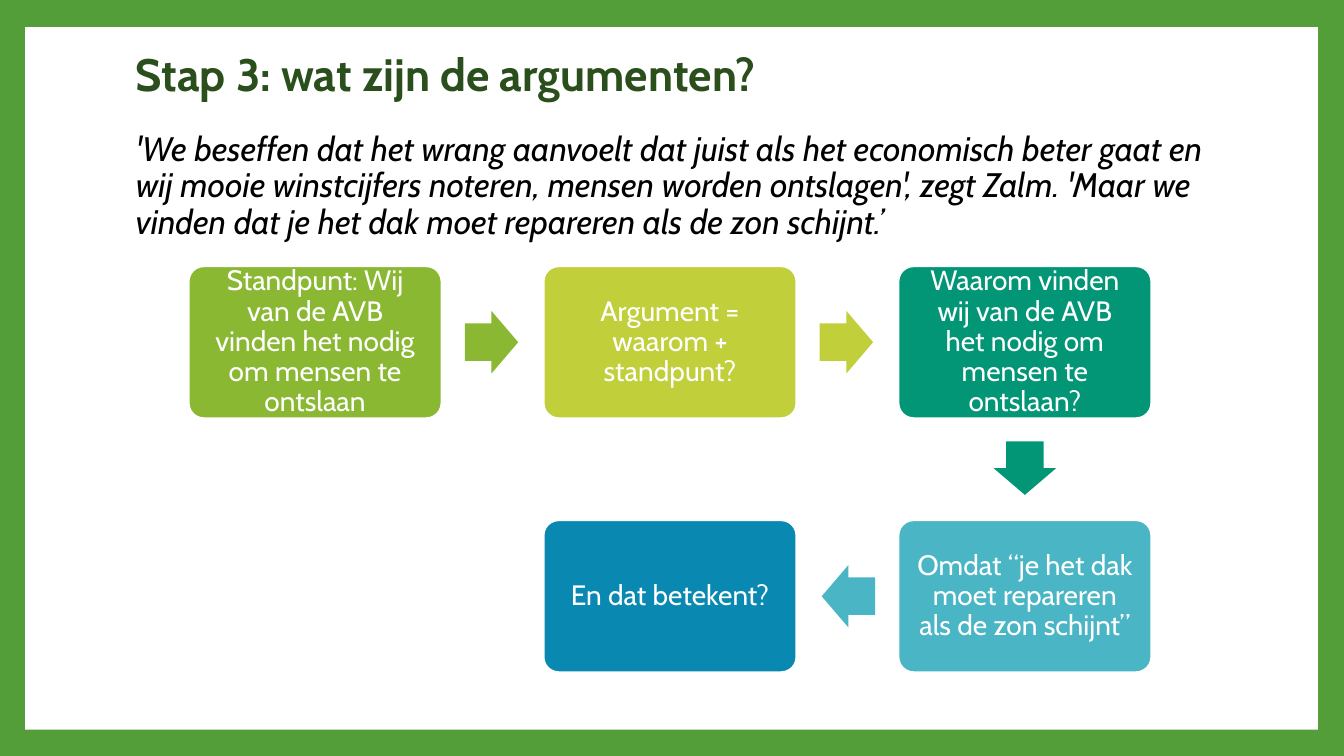
from pptx import Presentation
from pptx.dml.color import RGBColor
from pptx.enum.shapes import MSO_SHAPE as SHAPE
from pptx.enum.text import MSO_ANCHOR as ANCHOR, PP_ALIGN as ALIGN
from pptx.util import Inches, Pt

FONT = "Cabin"
COLORS = {
    "frame": "549E39", "white": "FFFFFF", "title": "2A4F1C", "quote": "000000",
    "green": "8AB833", "lime": "C0CF3A", "teal": "029676",
    "aqua": "4AB5C4", "blue": "0989B1",
}
TITLE = "Stap 3: wat zijn de argumenten?"
QUOTE = ("'We beseffen dat het wrang aanvoelt dat juist als het economisch beter gaat "
         "en wij mooie winstcijfers noteren, mensen worden ontslagen', zegt Zalm. "
         "'Maar we vinden dat je het dak moet repareren als de zon schijnt.’")
STEPS = [
    (0, 0, "green", "Standpunt: Wij van de AVB vinden het nodig om mensen te ontslaan"),
    (1, 0, "lime", "Argument = waarom + standpunt?"),
    (2, 0, "teal", "Waarom vinden wij van de AVB het nodig om mensen te ontslaan?"),
    (2, 1, "aqua", "Omdat “je het dak moet repareren als de zon schijnt”"),
    (1, 1, "blue", "En dat betekent?"),
]
STEP_W, STEP_H = 2.51, 1.51
ARROW_W, ARROW_H, ARROW_GAP = 0.53, 0.62, 0.23
ROTATION = {(1, 0): 0, (0, 1): 90, (-1, 0): 180}


def rgb(name):
    return RGBColor.from_string(COLORS[name])


def add_run(p, text, size, color, bold=False, italic=False):
    r = p.add_run()
    r.text = text
    r.font.name = FONT
    r.font.size = Pt(size)
    r.font.bold = bold
    r.font.italic = italic
    r.font.color.rgb = rgb(color)


def add_filled(slide, kind, left, top, width, height, color):
    sp = slide.shapes.add_shape(kind, Inches(left), Inches(top),
                                Inches(width), Inches(height))
    sp.shadow.inherit = False
    sp.fill.solid()
    sp.fill.fore_color.rgb = rgb(color)
    sp.line.fill.background()
    return sp


def add_frame(slide, left, top, width, height):
    slide.background.fill.solid()
    slide.background.fill.fore_color.rgb = rgb("frame")
    add_filled(slide, SHAPE.RECTANGLE, left, top, width, height, "white")


def add_heading(slide, left, top, width, height):
    box = slide.shapes.add_textbox(Inches(left), Inches(top),
                                   Inches(width), Inches(height))
    tf = box.text_frame
    tf.word_wrap = True
    tf.vertical_anchor = ANCHOR.MIDDLE
    title = tf.paragraphs[0]
    title.line_spacing = 0.9
    add_run(title, TITLE, 32.4, "title", bold=True)
    quote = tf.add_paragraph()
    quote.line_spacing = 0.9
    quote.space_before = Pt(21.5)
    add_run(quote, QUOTE, 24.3, "quote", italic=True)


def add_step(slide, left, top, color, text):
    sp = add_filled(slide, SHAPE.ROUNDED_RECTANGLE, left, top, STEP_W, STEP_H, color)
    sp.adjustments[0] = 0.1
    sp.line.color.rgb = rgb("white")
    sp.line.width = Pt(1.5)
    tf = sp.text_frame
    tf.word_wrap = True
    tf.vertical_anchor = ANCHOR.MIDDLE
    tf.margin_left = tf.margin_right = Inches(0.12)
    tf.margin_top = tf.margin_bottom = Inches(0.12)
    p = tf.paragraphs[0]
    p.alignment = ALIGN.CENTER
    p.line_spacing = 0.9
    add_run(p, text, 20, "white")


def add_arrow(slide, left, top, direction, color):
    dx, dy = direction
    reach = ARROW_GAP + ARROW_W / 2
    center_x = left + STEP_W / 2 + dx * (STEP_W / 2 + reach)
    center_y = top + STEP_H / 2 + dy * (STEP_H / 2 + reach)
    sp = add_filled(slide, SHAPE.RIGHT_ARROW, center_x - ARROW_W / 2,
                    center_y - ARROW_H / 2, ARROW_W, ARROW_H, color)
    sp.adjustments[0] = 0.6
    sp.adjustments[1] = 0.5
    sp.rotation = ROTATION[direction]


def add_flow(slide, left, top, width, height):
    pitch_x = (width - STEP_W) / 2
    pitch_y = height - STEP_H
    for i, (col, row, color, text) in enumerate(STEPS):
        x, y = left + col * pitch_x, top + row * pitch_y
        add_step(slide, x, y, color, text)
        if i + 1 < len(STEPS):
            next_col, next_row = STEPS[i + 1][:2]
            add_arrow(slide, x, y, (next_col - col, next_row - row), color)


def main():
    prs = Presentation()
    prs.slide_width = Inches(13.33)
    prs.slide_height = Inches(7.5)
    slide = prs.slides.add_slide(prs.slide_layouts[6])
    add_frame(slide, 0.25, 0.27, 12.82, 6.97)
    add_heading(slide, 1.25, 0.67, 10.8, 1.58)
    add_flow(slide, 1.87, 2.64, 9.55, 4.03)
    prs.save("out.pptx")


if __name__ == "__main__":
    main()
